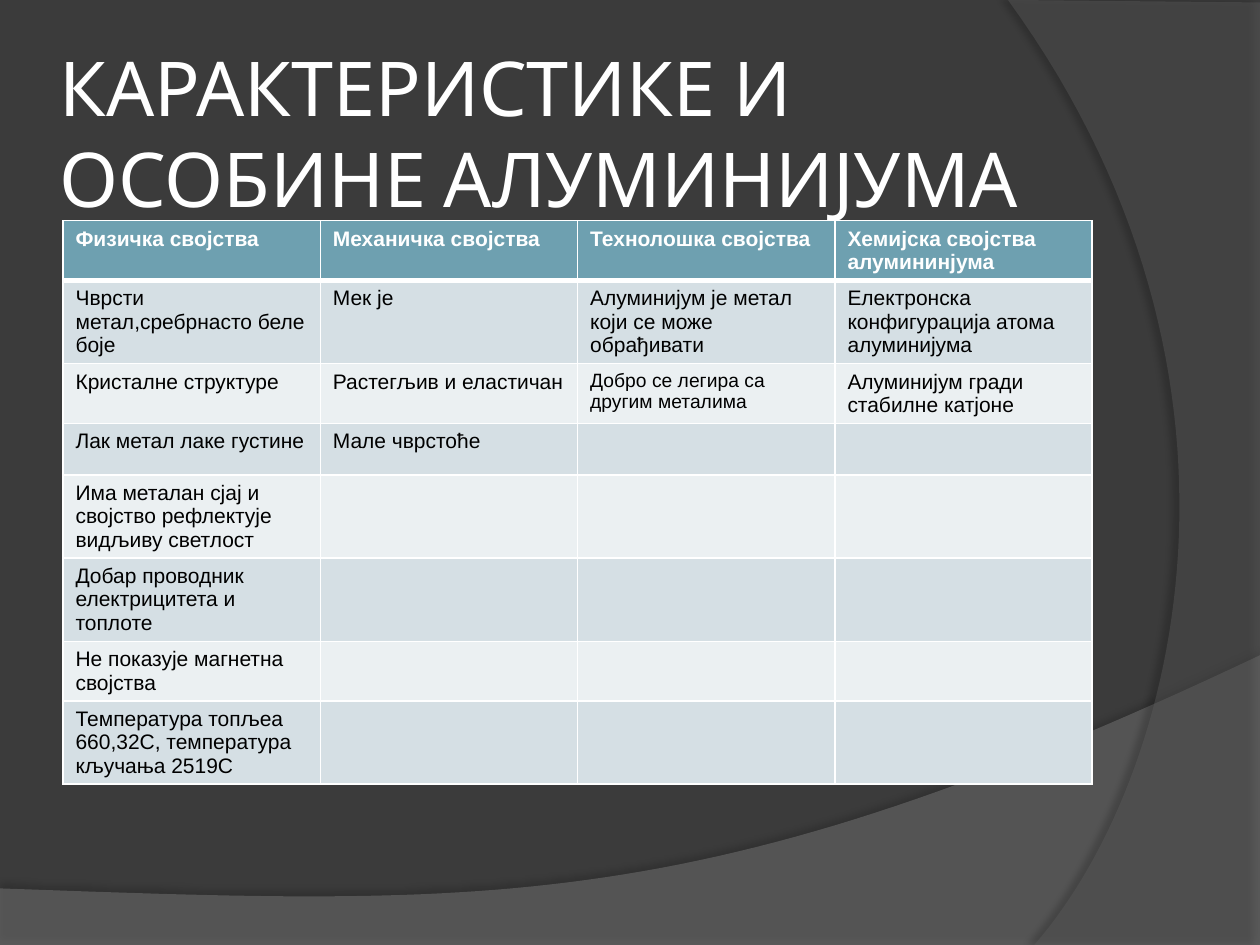
from lxml.etree import SubElement as Sub
from pptx import Presentation
from pptx.dml.color import RGBColor as Rgb
from pptx.enum.text import MSO_ANCHOR as Anchor, MSO_AUTO_SIZE as Auto, PP_ALIGN as Align
from pptx.oxml.ns import qn
from pptx.util import Cm, Pt

HUES = {"back": "3B3B3B", "wave": "7F7F7F", "arc": "5E5E5E", "head": "6EA0B0",
        "odd": "D5DFE4", "even": "EBF0F2", "white": "FFFFFF", "black": "000000"}

TITLE = "КАРАКТЕРИСТИКЕ И ОСОБИНЕ АЛУМИНИЈУМА"
COLS = [
    ["Физичка својства", "Чврсти метал,сребрнасто беле боје", "Кристалне структуре",
     "Лак метал лаке густине", "Има металан сјај и својство рефлектује видљиву светлост",
     "Добар проводник електрицитета и топлоте", "Не показује магнетна својства",
     "Температура топљеа 660,32C, температура кључања 2519C"],
    ["Механичка својства", "Мек је", "Растегљив и еластичан", "Мале чврстоће"],
    ["Технолошка својства", "Алуминијум је метал који се може обрађивати",
     "Добро се легира са другим металима"],
    ["Хемијска својства алумининјума", "Електронска конфигурација атома алуминијума",
     "Алуминијум гради стабилне катјоне"],
]
SMALL = (2, 2)  # row and column of the one cell in smaller type

# Corners in cm, then the Bezier that starts at the last corner; shadow in points
SWEEPS = [
    {"hue": "wave", "alpha": 45, "line": [(0, 17.91), (0, 19.07), (25.4, 19.07), (25.4, 13.21)],
     "bend": [(14.2, 18.52), (9.93, 18.26), (0, 17.91)],
     "shade": {"alpha": 35, "blur": 4, "dist": 3.5, "dir": 270}},
    {"hue": "arc", "alpha": 40, "line": [(25.4, 0.05), (25.4, 19.05), (20.85, 19.05)],
     "bend": [(23.75, 15.72), (25.86, 7.62), (20.32, 0)],
     "shade": {"alpha": 45, "blur": 4, "dist": 4, "dir": 180}},
]
STEPS = 60


def rgb(hue):
    return Rgb.from_string(HUES[hue])


def put(item, **vals):
    for key, val in vals.items():
        setattr(item, key, val)


def paint(item, hue):
    item.fill.solid()
    item.fill.fore_color.rgb = rgb(hue)


def style(para, size, font, hue, bold=False):
    put(para.font, size=Pt(size), name=font, bold=bold)
    para.font.color.rgb = rgb(hue)


def fade(color, alpha):
    Sub(color, qn("a:alpha"), val=str(alpha * 1000))


def bezier(pts):
    for i in range(1, STEPS + 1):
        t = i / STEPS
        w = ((1 - t) ** 3, 3 * t * (1 - t) ** 2, 3 * t * t * (1 - t), t ** 3)
        yield tuple(sum(k * p[axis] for k, p in zip(w, pts)) for axis in (0, 1))


def sweep(slide, part):
    line = part["line"]
    pts = line + list(bezier([line[-1]] + part["bend"]))
    pts = [(Cm(x), Cm(y)) for x, y in pts]
    pen = slide.shapes.build_freeform(*pts[0])
    pen.add_line_segments(pts[1:], close=True)
    shape = pen.convert_to_shape()
    paint(shape, part["hue"])
    shape.line.fill.background()
    shape.shadow.inherit = False
    props = shape._element.spPr
    fade(props.find(qn("a:solidFill"))[0], part["alpha"])
    shade = part["shade"]
    cast = Sub(props.find(qn("a:effectLst")), qn("a:outerShdw"),
               blurRad=str(Pt(shade["blur"])), dist=str(Pt(shade["dist"])),
               dir=str(shade["dir"] * 60000), algn="ctr", rotWithShape="0")
    fade(Sub(cast, qn("a:srgbClr"), val=HUES["black"]), shade["alpha"])


def border(cell, row):
    """Draw white edges, thick between the header and the body."""
    props = cell._tc.get_or_add_tcPr()
    thick = {"lnB": row == 0, "lnT": row == 1}
    for i, tag in enumerate(("lnL", "lnR", "lnT", "lnB")):
        edge = Sub(props, qn("a:" + tag), w=str(Pt(3 if thick.get(tag) else 1)))
        Sub(Sub(edge, qn("a:solidFill")), qn("a:srgbClr"), val=HUES["white"])
        props.insert(i, edge)


def head(slide):
    title = slide.shapes.title
    put(title, left=Cm(1.07), top=Cm(1.07), width=Cm(20.75), height=Cm(3.18))
    pad = Cm(0.13)
    put(title.text_frame, text=TITLE, word_wrap=True, auto_size=Auto.NONE,
        vertical_anchor=Anchor.MIDDLE, margin_left=pad, margin_right=pad,
        margin_top=pad, margin_bottom=pad)
    para = title.text_frame.paragraphs[0]
    para.alignment = Align.LEFT
    style(para, 43.2, "Karla", "white")
    slide.shapes._spTree.append(title._element)  # in front of the sweeps


def grid(slide):
    rows = len(COLS[0])
    table = slide.shapes.add_table(rows, len(COLS), Cm(1.27), Cm(4.45),
                                   Cm(20.75), Cm(1.04 * rows)).table
    for c, col in enumerate(COLS):
        for r in range(rows):
            cell = table.cell(r, c)
            paint(cell, "head" if r == 0 else "odd" if r % 2 else "even")
            border(cell, r)
            if r < len(col):
                cell.text = col[r]
                style(cell.text_frame.paragraphs[0], 11 if (r, c) == SMALL else 12,
                      "Arial", "black" if r else "white", r == 0)


def main():
    deck = Presentation()
    put(deck, slide_width=Cm(25.4), slide_height=Cm(19.05))
    slide = deck.slides.add_slide(deck.slide_layouts[5])
    paint(slide.background, "back")
    for part in SWEEPS:
        sweep(slide, part)
    head(slide)
    grid(slide)
    deck.save("out.pptx")


if __name__ == "__main__":
    main()
